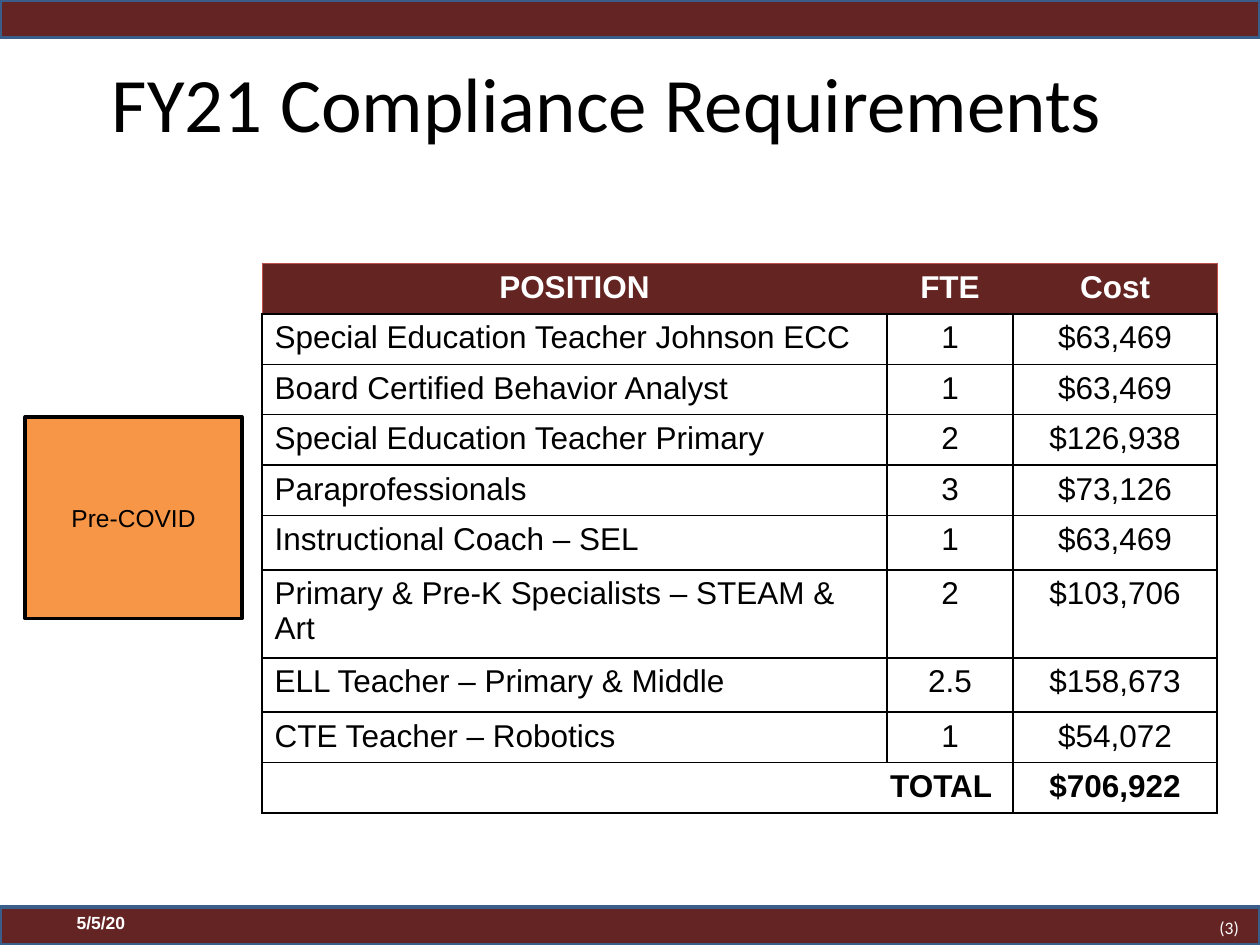
"""Build the FY21 compliance requirements slide."""
from lxml.etree import SubElement
from pptx import Presentation
from pptx.dml.color import RGBColor
from pptx.enum.shapes import MSO_SHAPE
from pptx.enum.text import MSO_ANCHOR, PP_ALIGN
from pptx.oxml import parse_xml
from pptx.oxml.ns import nsdecls, qn
from pptx.util import Inches, Pt

COLORS = {
    "maroon": "632423",
    "header": "642422",
    "header_edge": "C0504D",
    "bar_edge": "395E89",
    "orange": "F79646",
    "black": "000000",
    "white": "FFFFFF",
}


def add_text(frame, text, size, color, font="Arial", bold=False, align=PP_ALIGN.LEFT):
    frame.word_wrap = True
    paragraph = frame.paragraphs[0]
    paragraph.alignment = align
    run = paragraph.add_run()
    run.text = text
    run.font.name = font
    run.font.size = Pt(size)
    run.font.bold = bold
    run.font.color.rgb = RGBColor.from_string(COLORS[color])


def set_borders(cell, borders):
    properties = cell._tc.get_or_add_tcPr()
    for index, (side, border) in enumerate(borders.items()):
        line = parse_xml(f"<a:ln{side} {nsdecls('a')}/>")
        if border:
            color, width = border
            line.set("w", str(Pt(width)))
            fill = SubElement(line, qn("a:solidFill"))
            SubElement(fill, qn("a:srgbClr")).set("val", COLORS[color])
        else:
            SubElement(line, qn("a:noFill"))
        properties.insert(index, line)


presentation = Presentation()
presentation.slide_width = Inches(10)
presentation.slide_height = Inches(7.5)
slide = presentation.slides.add_slide(presentation.slide_layouts[6])

boxes = [
    (0, 0, 10, 0.3, "maroon", "bar_edge", ""),
    (0, 7.2, 10, 0.3, "maroon", "bar_edge", ""),
    (0.2, 3.31, 1.72, 1.6, "orange", "black", "Pre-COVID"),
]
for left, top, width, height, fill, edge, label in boxes:
    shape = slide.shapes.add_shape(
        MSO_SHAPE.RECTANGLE, Inches(left), Inches(top), Inches(width), Inches(height)
    )
    shape.shadow.inherit = False
    shape.fill.solid()
    shape.fill.fore_color.rgb = RGBColor.from_string(COLORS[fill])
    shape.line.color.rgb = RGBColor.from_string(COLORS[edge])
    shape.line.width = Pt(2)
    if label:
        shape.text_frame.vertical_anchor = MSO_ANCHOR.MIDDLE
        add_text(shape.text_frame, label, 14, "black", align=PP_ALIGN.CENTER)

title = slide.shapes.add_textbox(Inches(0.32), Inches(0.47), Inches(9), Inches(0.67))
title.text_frame.vertical_anchor = MSO_ANCHOR.MIDDLE
add_text(title.text_frame, "FY21 Compliance Requirements", 44, "black", "Calibri", align=PP_ALIGN.CENTER)

rows = [
    ("POSITION", "FTE", "Cost"),
    ("Special Education Teacher Johnson ECC", "1", "$63,469"),
    ("Board Certified Behavior Analyst", "1", "$63,469"),
    ("Special Education Teacher Primary", "2", "$126,938"),
    ("Paraprofessionals", "3", "$73,126"),
    ("Instructional Coach – SEL", "1", "$63,469"),
    ("Primary & Pre-K Specialists – STEAM & Art", "2", "$103,706"),
    ("ELL Teacher – Primary & Middle", "2.5", "$158,673"),
    ("CTE Teacher – Robotics", "1", "$54,072"),
    ("TOTAL ", "", "$706,922"),
]
row_heights = [0.38] * 5 + [0.43] * 3 + [0.38] * 2
column_widths = [4.96, 1, 1.62]
last_row = len(rows) - 1
last_column = len(column_widths) - 1
table = slide.shapes.add_table(
    len(rows), len(column_widths), Inches(2.08), Inches(2.09),
    Inches(sum(column_widths)), Inches(sum(row_heights)),
).table
for column, width in zip(table.columns, column_widths):
    column.width = Inches(width)
for row, height in zip(table.rows, row_heights):
    row.height = Inches(height)
table.cell(last_row, 0).merge(table.cell(last_row, 1))

grid_line = ("black", 1)
header_line = ("header_edge", 0.75)
for row_index, values in enumerate(rows):
    is_header = row_index == 0
    for column_index, value in enumerate(values):
        cell = table.cell(row_index, column_index)
        borders = dict.fromkeys("LRTB", grid_line)
        if is_header:
            cell.fill.solid()
            cell.fill.fore_color.rgb = RGBColor.from_string(COLORS["header"])
            borders["L"] = header_line if column_index == 0 else None
            borders["R"] = header_line if column_index == last_column else None
            borders["T"] = header_line
        else:
            cell.fill.background()
        set_borders(cell, borders)
        if is_header or column_index > 0:
            align = PP_ALIGN.CENTER
        else:
            align = PP_ALIGN.RIGHT if row_index == last_row else PP_ALIGN.LEFT
        if value:
            color = "white" if is_header else "black"
            add_text(cell.text_frame, value, 18, color, bold=row_index in (0, last_row), align=align)

page_number = slide.shapes.add_textbox(Inches(9.58), Inches(7.19), Inches(0.5), Inches(0.32))
page_number.text_frame.margin_top = Inches(0.1)
page_number.text_frame.margin_bottom = Inches(0.1)
add_text(page_number.text_frame, "(3)", 10, "white", "Calibri")

date = slide.shapes.add_textbox(Inches(0.51), Inches(7.19), Inches(2.33), Inches(0.4))
add_text(date.text_frame, "5/5/20", 10, "white", bold=True)

presentation.save("out.pptx")
